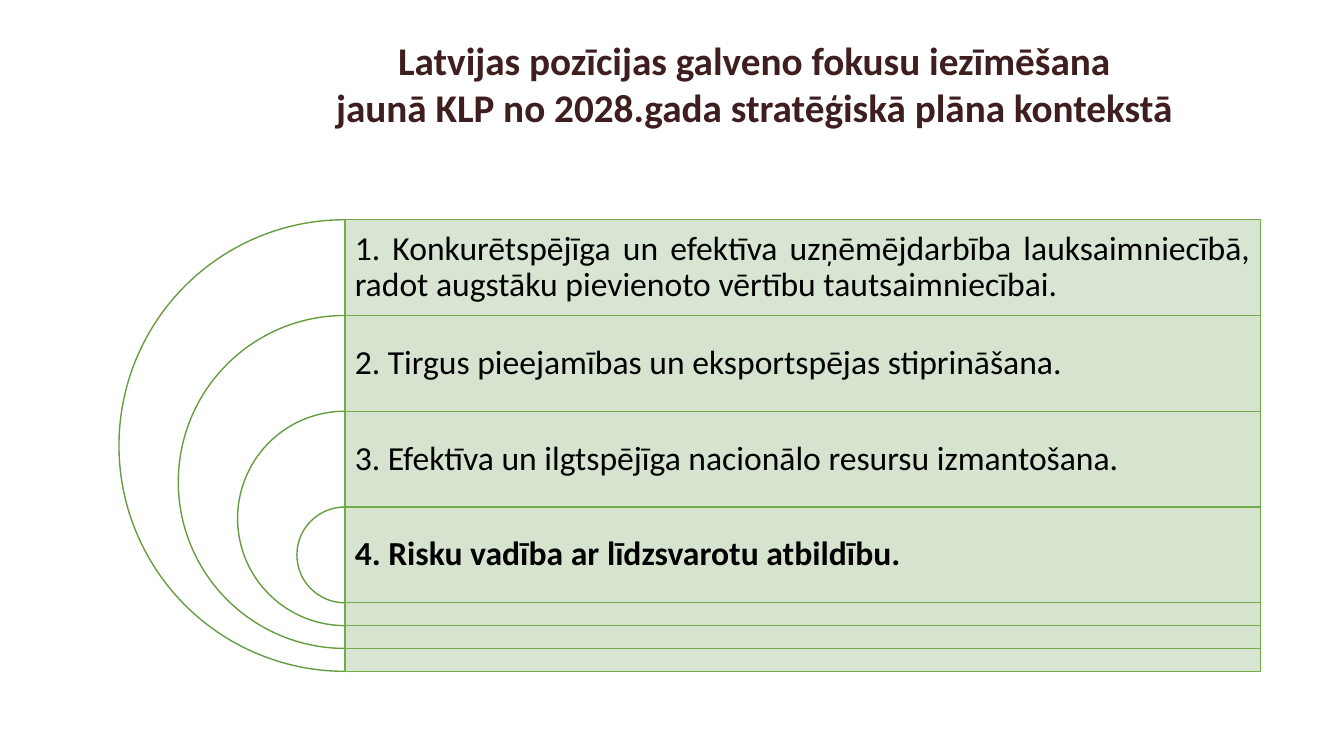
from lxml.etree import SubElement as Sub
from pptx import Presentation
from pptx.dml.color import RGBColor
from pptx.enum.shapes import MSO_SHAPE as Shape
from pptx.enum.text import MSO_ANCHOR as Anchor, MSO_AUTO_SIZE as Fit, PP_ALIGN as Align
from pptx.oxml.ns import qn
from pptx.util import Inches, Pt

BROWN = RGBColor(0x3E, 0x1E, 0x1F)
BLACK = RGBColor(0, 0, 0)
WHITE = RGBColor(0xFF, 0xFF, 0xFF)
PALE = RGBColor(0xD5, 0xE3, 0xCF)
GREEN = RGBColor(0x70, 0xAD, 0x47)
MOSS = RGBColor(0x66, 0x9D, 0x40)

TITLE = ["Latvijas pozīcijas galveno fokusu iezīmēšana",
         "jaunā KLP no 2028.gada stratēģiskā plāna kontekstā"]
GOALS = [
    ("1. Konkurētspējīga un efektīva uzņēmējdarbība lauksaimniecībā, "
     "radot augstāku pievienoto vērtību tautsaimniecībai.", False),
    ("2. Tirgus pieejamības un eksportspējas stiprināšana.", False),
    ("3. Efektīva un ilgtspējīga nacionālo resursu izmantošana.", False),
    ("4. Risku vadība ar līdzsvarotu atbildību.", True),
]

EDGE, TOP, WIDE = 3.42, 2.18, 9.08
FULL, ROW = 4.48, 0.95
COUNT = len(GOALS)
SHRINK = (FULL - ROW) / (COUNT - 1)


def write(frame, lines, size=24, color=BLACK, bold=False, align=Align.JUSTIFY,
          anchor=Anchor.MIDDLE, space=0.9):
    frame.word_wrap = True
    frame.vertical_anchor = anchor
    for i, line in enumerate(lines):
        para = frame.paragraphs[0] if i == 0 else frame.add_paragraph()
        para.alignment = align
        para.line_spacing = space
        run = para.add_run()
        run.text = line
        font = run.font
        font.name = "Calibri"
        font.size = Pt(size)
        font.bold = bold
        font.color.rgb = color


class Deck:
    def __init__(self):
        self.prs = Presentation()
        self.prs.slide_width = Inches(13.33)
        self.prs.slide_height = Inches(7.5)
        self.slide = self.prs.slides.add_slide(self.prs.slide_layouts[5])

    def title(self, lines, left, top, width, height):
        box = self.slide.shapes.title
        box.left, box.top = Inches(left), Inches(top)
        box.width, box.height = Inches(width), Inches(height)
        write(box.text_frame, lines, size=28, color=BROWN, bold=True,
              align=Align.CENTER, anchor=Anchor.TOP, space=1.0)
        box.text_frame.auto_size = Fit.SHAPE_TO_FIT_TEXT

    def shape(self, kind, left, top, width, height, fill, line):
        item = self.slide.shapes.add_shape(
            kind, Inches(left), Inches(top), Inches(width), Inches(height))
        item.shadow.inherit = False
        item.fill.solid()
        item.fill.fore_color.rgb = fill
        item.line.color.rgb = line
        item.line.width = Pt(1)
        return item

    def arc(self, left, top, size):
        pie = self.shape(Shape.PIE, left, top, size, size, WHITE, MOSS)
        pie.adjustments[0] = 54
        pie.adjustments[1] = 162

    def panel(self, left, top, width, height):
        rect = self.shape(Shape.RECTANGLE, left, top, width, height, PALE, GREEN)
        tint = rect.fill._xPr.find(qn("a:solidFill"))[0]
        Sub(tint, qn("a:alpha"), val="90000")

    def label(self, text, left, top, width, height, bold):
        box = self.slide.shapes.add_textbox(
            Inches(left), Inches(top), Inches(width), Inches(height))
        frame = box.text_frame
        frame.margin_left = frame.margin_right = Inches(0.1)
        frame.margin_top = frame.margin_bottom = Inches(0.1)
        write(frame, [text], bold=bold)


def main():
    deck = Deck()
    deck.title(TITLE, 2.98, 0.31, 9, 1.04)
    for i, (text, bold) in enumerate(GOALS):
        size = FULL - i * SHRINK
        top = TOP + i * ROW
        deck.arc(EDGE - size / 2, top, size)
        deck.panel(EDGE, top, WIDE, size)
        deck.label(text, EDGE, top, WIDE, ROW, bold)
    deck.prs.save("out.pptx")


if __name__ == "__main__":
    main()
